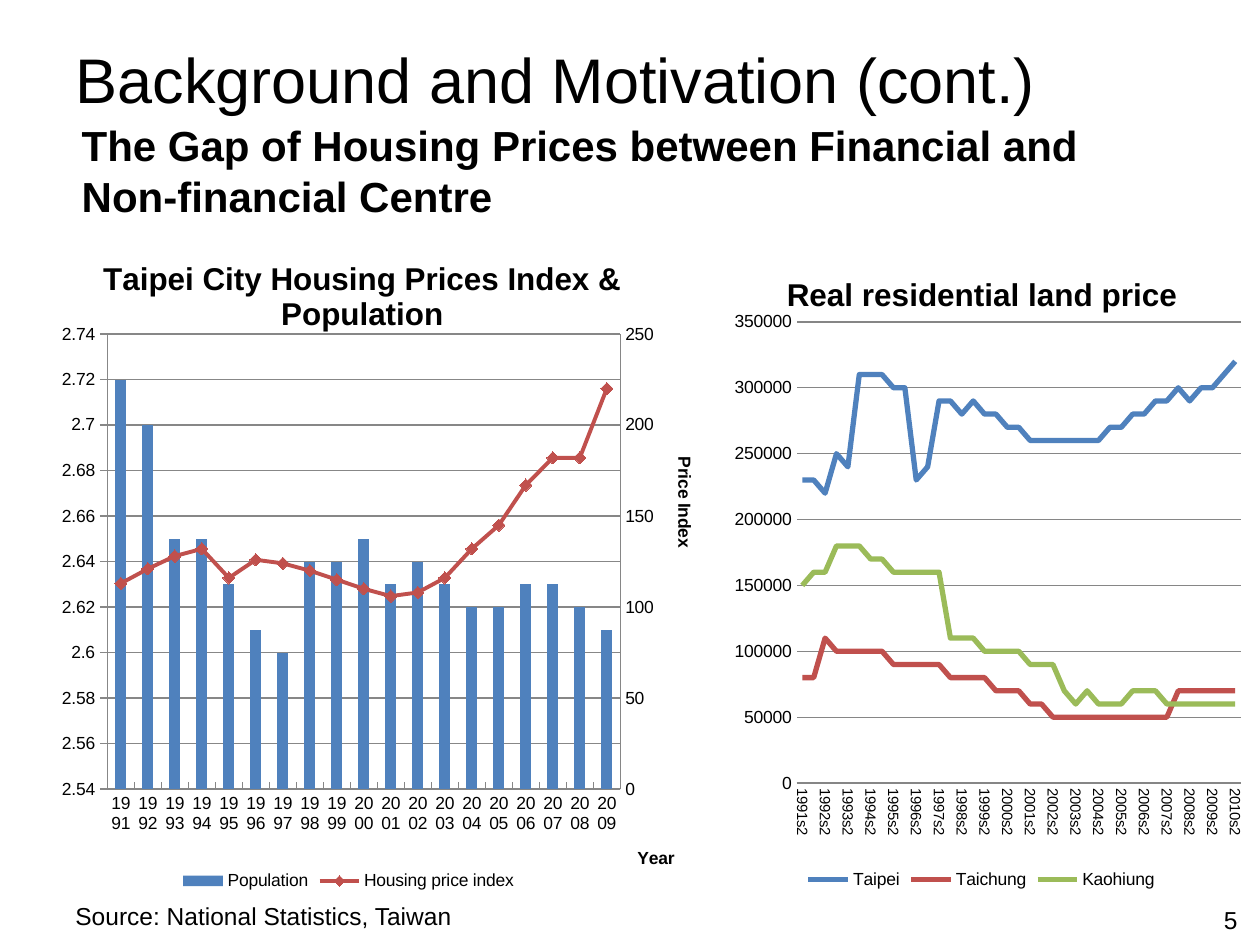
from pptx import Presentation
from pptx.chart.axis import ValueAxis
from pptx.chart.data import CategoryChartData
from pptx.dml.color import RGBColor
from pptx.enum.chart import XL_CHART_TYPE, XL_LEGEND_POSITION, XL_MARKER_STYLE, XL_TICK_MARK
from pptx.enum.text import MSO_ANCHOR, PP_ALIGN
from pptx.oxml import parse_xml
from pptx.oxml.ns import nsdecls, qn
from pptx.util import Inches, Pt

COLUMN, LINE = XL_CHART_TYPE.COLUMN_CLUSTERED, XL_CHART_TYPE.LINE
BOTTOM_LEGEND, DIAMOND = XL_LEGEND_POSITION.BOTTOM, XL_MARKER_STYLE.DIAMOND
NO_TICK, INSIDE_TICK = XL_TICK_MARK.NONE, XL_TICK_MARK.INSIDE
MIDDLE, BOTTOM = MSO_ANCHOR.MIDDLE, MSO_ANCHOR.BOTTOM
LEFT, RIGHT = PP_ALIGN.LEFT, PP_ALIGN.RIGHT

# Content
FONT = "Arial"
COLORS = {"text": "000000", "axis": "868686", "blue": "4F81BD",
          "red": "C0504D", "green": "9BBB59"}
TITLE = "Background and Motivation (cont.)"
# text, box, size, bold, anchor, alignment
TEXTS = [
    ("The Gap of Housing Prices between Financial and Non-financial Centre",
     (0.55, 1.17, 8.91, 0.63), 24, True, BOTTOM, LEFT),
    ("Source: National Statistics, Taiwan", (0.5, 7.1, 4.42, 0.34), 14, False, MIDDLE, LEFT),
    ("5", (7.84, 7.14, 2.08, 0.32), 14, False, MIDDLE, RIGHT),
]
YEARS = [str(year) for year in range(1991, 2010)]
INDEX_SERIES = {
    "Population": [2.72, 2.7, 2.65, 2.65, 2.63, 2.61, 2.6, 2.64, 2.64, 2.65,
                   2.63, 2.64, 2.63, 2.62, 2.62, 2.63, 2.63, 2.62, 2.61],
    "Housing price index": [113, 121, 128, 132, 116, 126, 124, 120, 115, 110,
                            106, 108, 116, 132, 145, 167, 182, 182, 220],
}
HALF_YEARS = [f"{year}s{half}" for year in range(1991, 2011) for half in (1, 2)][1:]
# Land prices in units of 10000
LAND_SERIES = {
    "Taipei": [23, 23, 22, 25, 24, 31, 31, 31, 30, 30, 23, 24, 29, 29, 28, 29, 28, 28, 27, 27,
               26, 26, 26, 26, 26, 26, 26, 27, 27, 28, 28, 29, 29, 30, 29, 30, 30, 31, 32],
    "Taichung": [8, 8, 11, 10, 10, 10, 10, 10, 9, 9, 9, 9, 9, 8, 8, 8, 8, 7, 7, 7,
                 6, 6, 5, 5, 5, 5, 5, 5, 5, 5, 5, 5, 5, 7, 7, 7, 7, 7, 7],
    "Kaohiung": [15, 16, 16, 18, 18, 18, 17, 17, 16, 16, 16, 16, 16, 11, 11, 11, 10, 10, 10, 10,
                 9, 9, 9, 7, 6, 7, 6, 6, 6, 7, 7, 7, 6, 6, 6, 6, 6, 6, 6],
}


def color(name):
    return RGBColor.from_string(COLORS[name])


def set_font(font, size, bold=False):
    for key, value in {"name": FONT, "size": Pt(size), "bold": bold}.items():
        setattr(font, key, value)
    font.color.rgb = color("text")


def place_layout(element, **parts):
    """Give a chart part a manual layout in shares of the chart."""
    layout = element.find(qn("c:layout"))
    if layout is None:
        layout = parse_xml(f"<c:layout {nsdecls('c')}/>")
        element.insert(0, layout)
    target = '<c:layoutTarget val="inner"/>' if "w" in parts else ""
    modes = "".join(f'<c:{key}Mode val="edge"/>' for key in "xy")
    values = "".join(f'<c:{key} val="{value}"/>' for key, value in parts.items())
    layout.append(parse_xml(
        f"<c:manualLayout {nsdecls('c')}>{target}{modes}{values}</c:manualLayout>"))


def fill_title(title, text, size, x, y, rotation=0):
    frame = title.text_frame
    frame.text = text
    set_font(frame.paragraphs[0].runs[0].font, size, True)
    body = title._element.find(".//" + qn("a:bodyPr"))
    body.set("rot", str(rotation * 60000))
    body.set("vert", "horz")
    place_layout(title._element, x=x, y=y)


def style_axis(axis, tick, size=10, low=None, high=None, step=None):
    axis.has_major_gridlines = False
    axis.major_tick_mark, axis.minor_tick_mark = tick, NO_TICK
    axis.format.line.color.rgb = color("axis")
    set_font(axis.tick_labels.font, size)
    if high is not None:
        axis.minimum_scale, axis.maximum_scale, axis.major_unit = low, high, step


def turn_labels(axis, degrees):
    axis._element.find(qn("c:txPr")).find(qn("a:bodyPr")).set("rot", str(degrees * 60000))


def style_line(series, name, width):
    series.smooth = False
    series.format.line.color.rgb = color(name)
    series.format.line.width = Pt(width)


def add_chart(slide, kind, box, categories, series, title, title_at, plot_box):
    data = CategoryChartData()
    data.categories = categories
    for name, values in series.items():
        data.add_series(name, values)
    chart = slide.shapes.add_chart(kind, *map(Inches, box), data).chart
    set_font(chart.font, 10)
    chart.has_title = chart.has_legend = True
    fill_title(chart.chart_title, title, 18, *title_at)
    chart.legend.position = BOTTOM_LEGEND
    chart.legend.include_in_layout = False
    set_font(chart.legend.font, 10)
    chart.plots[0].vary_by_categories = False
    place_layout(chart._chartSpace.chart.plotArea, **dict(zip("xywh", plot_box)))
    return chart


def move_to_right_axis(chart):
    """Turn the last column series into a line on a second value axis."""
    area = chart._chartSpace.chart.plotArea
    columns = area.find(qn("c:barChart"))
    series = columns.findall(qn("c:ser"))[-1]
    for flag in series.findall(qn("c:invertIfNegative")):
        series.remove(flag)
    line = parse_xml(
        f'<c:lineChart {nsdecls("c")}><c:grouping val="standard"/><c:varyColors val="0"/>'
        '<c:marker val="1"/><c:axId val="501"/><c:axId val="502"/></c:lineChart>')
    line.insert(2, series)
    columns.addnext(line)
    # Kind, id, crossing id, hidden, side, tail
    for kind, own, other, hidden, side, tail in (
            ("valAx", 502, 501, 0, "r", '<c:crosses val="max"/><c:crossBetween val="between"/>'),
            ("catAx", 501, 502, 1, "b", '<c:crosses val="autoZero"/>')):
        area.findall(qn("c:valAx"))[-1].addnext(parse_xml(
            f'<c:{kind} {nsdecls("c")}><c:axId val="{own}"/>'
            '<c:scaling><c:orientation val="minMax"/></c:scaling>'
            f'<c:delete val="{hidden}"/><c:axPos val="{side}"/>'
            '<c:numFmt formatCode="General" sourceLinked="0"/>'
            f'<c:tickLblPos val="nextTo"/><c:crossAx val="{other}"/>{tail}</c:{kind}>'))
    return ValueAxis(area.findall(qn("c:valAx"))[-1])


def add_index_chart(slide):
    chart = add_chart(slide, COLUMN, (0, 1.95, 5.55, 5.16), YEARS, INDEX_SERIES,
                      "Taipei City Housing Prices Index & Population", (0.14, 0.01),
                      (0.154, 0.136, 0.736, 0.7))
    right_axis = move_to_right_axis(chart)
    columns, line = chart.plots
    columns.gap_width = 150
    bars = columns.series[0].format.fill
    bars.solid()
    bars.fore_color.rgb = color("blue")
    index = line.series[0]
    style_line(index, "red", 2.25)
    index.marker.style, index.marker.size = DIAMOND, 7
    index.marker.format.fill.solid()
    index.marker.format.fill.fore_color.rgb = color("red")
    index.marker.format.line.color.rgb = color("red")
    style_axis(chart.category_axis, INSIDE_TICK)
    turn_labels(chart.category_axis, 0)
    style_axis(chart.value_axis, INSIDE_TICK, 10, 2.5, 2.75, 0.05)
    style_axis(right_axis, INSIDE_TICK, 10, 0, 250, 50)
    fill_title(chart.category_axis.axis_title, "Year", 10, 0.91, 0.92)
    fill_title(chart.value_axis.axis_title, "Population/Million ", 10, 0.03, 0.28, -90)
    fill_title(right_axis.axis_title, "Price Index", 10, 0.96, 0.32, 90)


def add_land_chart(slide):
    prices = {city: [value * 10000 for value in values] for city, values in LAND_SERIES.items()}
    chart = add_chart(slide, LINE, (5.58, 1.87, 4.42, 5.23), HALF_YEARS, prices,
                      "Real residential land price", (0.14, 0.05),
                      (0.168, 0.131, 0.798, 0.7))
    for series, name in zip(chart.plots[0].series, ("blue", "red", "green")):
        style_line(series, name, 3)
    style_axis(chart.category_axis, NO_TICK, 8.5)
    turn_labels(chart.category_axis, 90)
    chart.category_axis._element.find(qn("c:noMultiLvlLbl")).addprevious(
        parse_xml(f'<c:tickLblSkip {nsdecls("c")} val="2"/>'))
    style_axis(chart.value_axis, NO_TICK, 10, 0, 350000, 50000)
    chart.value_axis.format.line.fill.background()
    chart.value_axis.has_major_gridlines = True
    chart.value_axis.major_gridlines.format.line.color.rgb = color("axis")


def write_text(shape, text, box, size, bold, anchor, alignment):
    shape.left, shape.top, shape.width, shape.height = map(Inches, box)
    frame = shape.text_frame
    frame.word_wrap, frame.vertical_anchor = True, anchor
    frame.text = text
    para = frame.paragraphs[0]
    para.alignment = alignment
    set_font(para.runs[0].font, size, bold)


def main():
    deck = Presentation()
    deck.slide_width, deck.slide_height = Inches(10), Inches(7.5)
    page = deck.slides.add_slide(deck.slide_layouts[5])
    # Title, subtitle, source and page number
    write_text(page.shapes.title, TITLE, (0.5, 0.23, 9, 0.78), 36, False, MIDDLE, LEFT)
    for text, box, *style in TEXTS:
        write_text(page.shapes.add_textbox(*map(Inches, box)), text, box, *style)
    # Charts
    add_land_chart(page)
    add_index_chart(page)
    deck.save("out.pptx")


if __name__ == "__main__":
    main()
